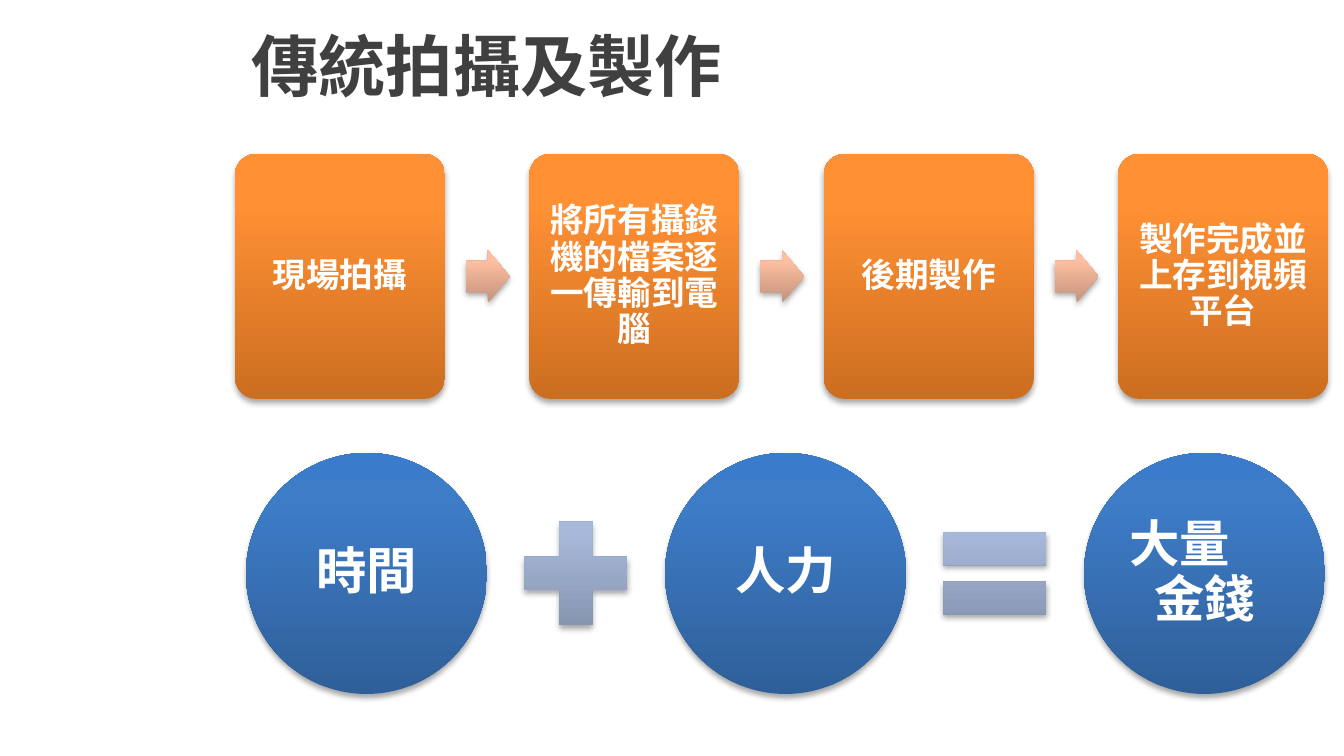
from lxml import etree
from pptx import Presentation
from pptx.dml.color import RGBColor
from pptx.enum.shapes import MSO_SHAPE
from pptx.enum.text import MSO_ANCHOR, PP_ALIGN
from pptx.oxml import parse_xml
from pptx.oxml.ns import nsdecls, qn
from pptx.util import Pt

ROUNDED, ARROW = MSO_SHAPE.ROUNDED_RECTANGLE, MSO_SHAPE.RIGHT_ARROW
OVAL, PLUS, EQUAL = MSO_SHAPE.OVAL, MSO_SHAPE.MATH_PLUS, MSO_SHAPE.MATH_EQUAL
LEFT, CENTER = PP_ALIGN.LEFT, PP_ALIGN.CENTER
MIDDLE = MSO_ANCHOR.MIDDLE

FONT = "Noto Sans CJK SC"
WHITE, DARK = "FFFFFF", "404040"
STOPS = (0, 80, 100)
ORANGE = ("CC6E20", "FF9034", "FF9136")
PEACH = ("C3937C", "FDBFA1", "FFBFA1")
BLUE = ("2F5F99", "3D7CC7", "3A7CCB")
PALE_BLUE = ("818FA8", "A7B9DA", "A7BADC")

STEPS = ["現場拍攝", "將所有攝錄機的檔案逐一傳輸到電腦", "後期製作", "製作完成並上存到視頻平台"]
TERMS = [["時間"], ["人力"], ["大量", "金錢"]]
SIGNS = [PLUS, EQUAL]


def px(n):
    return round(n * 914400 / 134.4)


def rgb(color):
    return RGBColor.from_string(color)


def add_run(p, text, size, color):
    r = p.add_run()
    r.text = text
    font = r.font
    font.name, font.size, font.bold = FONT, Pt(size), True
    font.color.rgb = rgb(color)
    latin = r._r.rPr.find(qn("a:latin"))
    ea = etree.Element(qn("a:ea"), typeface=FONT)
    latin.addnext(ea)


def add_shaded(s, kind, x, y, w, h, colors):
    """Add a shape with a vertical gradient and a soft shadow below it."""
    sp = s.shapes.add_shape(kind, px(x), px(y), px(w), px(h))
    sp.line.fill.background()
    stops = "".join(
        f'<a:gs pos="{pos * 1000}"><a:srgbClr val="{rgb(color)}"/></a:gs>'
        for pos, color in zip(STOPS, colors))
    sp._element.spPr.find(qn("a:ln")).addprevious(parse_xml(
        f'<a:gradFill {nsdecls("a")} rotWithShape="1"><a:gsLst>{stops}</a:gsLst>'
        '<a:lin ang="16200000" scaled="0"/></a:gradFill>'))
    sp._element.spPr.append(parse_xml(
        f'<a:effectLst {nsdecls("a")}><a:outerShdw blurRad="40000" dist="23000" '
        'dir="5400000" rotWithShape="0"><a:srgbClr val="000000">'
        '<a:alpha val="35000"/></a:srgbClr></a:outerShdw></a:effectLst>'))
    return sp


def add_label(sp, lines, size, inset):
    tf = sp.text_frame
    tf.word_wrap = True
    tf.vertical_anchor = MIDDLE
    tf.margin_left = tf.margin_right = tf.margin_top = tf.margin_bottom = px(inset)
    for i, line in enumerate(lines):
        p = tf.paragraphs[0] if i == 0 else tf.add_paragraph()
        p.alignment = CENTER
        p.line_spacing = 0.9
        add_run(p, line, size, WHITE)
    return tf


def add_title(s, x, y, w, h):
    title = s.shapes.title
    title.left, title.top, title.width, title.height = px(x), px(y), px(w), px(h)
    tf = title.text_frame
    tf.vertical_anchor = MIDDLE
    p = tf.paragraphs[0]
    p.alignment = LEFT
    add_run(p, "傳統拍攝及製作", 36, DARK)


def add_process(s, x, y, w, h):
    """Add the step cards with an arrow in each gap."""
    card_w, arrow_w, arrow_h = 210, 44, 52
    pitch = (w - card_w) / (len(STEPS) - 1)
    for i, step in enumerate(STEPS):
        left = x + i * pitch
        card = add_shaded(s, ROUNDED, left, y, card_w, h, ORANGE)
        card.adjustments[0] = 0.1
        add_label(card, [step], 18, 9)
        if i < len(STEPS) - 1:
            arrow = add_shaded(s, ARROW, left + card_w + 21, y + (h - arrow_h) / 2,
                               arrow_w, arrow_h, PEACH)
            arrow.adjustments[0] = 0.6


def add_equation(s, x, y, w, h):
    """Add the circles with a sign centred in each gap."""
    sign_size = 140
    pitch = (w - h) / (len(TERMS) - 1)
    for i, lines in enumerate(TERMS):
        left = x + i * pitch
        circle = add_shaded(s, OVAL, left, y, h, h, BLUE)
        tf = add_label(circle, lines, 27, 5)
        if len(lines) > 1:
            p = tf.paragraphs[0]
            p.alignment = LEFT
            p._p.get_or_add_pPr().set("marL", str(px(5)))
        if i < len(SIGNS):
            add_shaded(s, SIGNS[i], left + (pitch + h - sign_size) / 2,
                       y + (h - sign_size) / 2, sign_size, sign_size, PALE_BLUE)


def main():
    prs = Presentation()
    prs.slide_width, prs.slide_height = px(1344), px(756)
    s = prs.slides.add_slide(prs.slide_layouts[5])
    add_title(s, 238, 0, 1106, 130)
    add_process(s, 235, 154, 1093, 245)
    add_equation(s, 246, 453, 1079, 241)
    prs.save("out.pptx")


if __name__ == "__main__":
    main()
